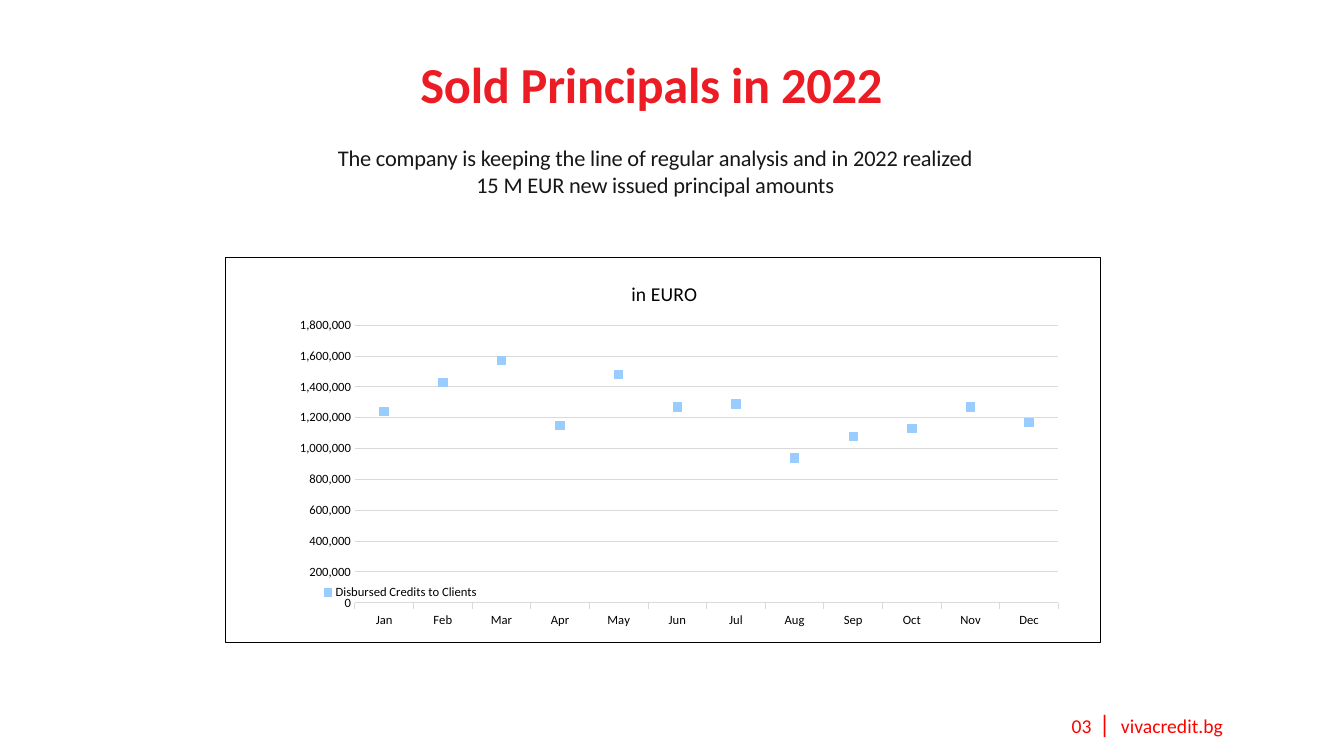
from lxml.etree import SubElement
from pptx import Presentation
from pptx.chart.data import CategoryChartData
from pptx.dml.color import RGBColor
from pptx.enum.chart import XL_CHART_TYPE, XL_LEGEND_POSITION, XL_MARKER_STYLE, XL_TICK_MARK
from pptx.enum.text import MSO_ANCHOR, PP_ALIGN
from pptx.oxml import parse_xml
from pptx.oxml.ns import nsdecls, qn
from pptx.util import Inches, Pt

FONT = "Calibri"
MONTHS = "Jan Feb Mar Apr May Jun Jul Aug Sep Oct Nov Dec".split()
CREDITS = [1240000, 1430000, 1570000, 1150000, 1480000, 1270000,
           1290000, 940000, 1080000, 1130000, 1270000, 1170000]


def rgb(value):
    """Return the colour for a hex string."""
    return RGBColor.from_string(value)


def style_font(font, size, color="000000", bold=False):
    """Apply the deck's typeface with a size, colour and weight."""
    font.name, font.size, font.bold = FONT, Pt(size), bold
    font.color.rgb = rgb(color)


def add_text(p, text, size=16, color="000000", bold=False, spacing=0):
    """Append formatted text to a paragraph, with spacing in points."""
    r = p.add_run()
    r.text = text
    style_font(r.font, size, color, bold)
    if spacing:
        r.font._element.set("spc", str(round(spacing * 100)))


def add_tabs(p, *stops):
    """Set left tab stops, in inches, on a paragraph."""
    tabs = SubElement(p._p.get_or_add_pPr(), qn("a:tabLst"))
    for stop in stops:
        SubElement(tabs, qn("a:tab"), pos=str(Inches(stop)), algn="l")


def add_box(s, x, y, w, h):
    """Add a wrapping text box and return its first paragraph."""
    tf = s.shapes.add_textbox(Inches(x), Inches(y), Inches(w), Inches(h)).text_frame
    tf.word_wrap = True
    return tf.paragraphs[0]


def add_title(s, x, y, w, h):
    """Place the slide title in its placeholder."""
    sp = s.shapes.title
    sp.left, sp.top, sp.width, sp.height = map(Inches, (x, y, w, h))
    tf = sp.text_frame
    tf.margin_left = tf.margin_right = tf.margin_bottom = 0
    tf.margin_top = Inches(0.02)
    tf.vertical_anchor = MSO_ANCHOR.TOP
    p = tf.paragraphs[0]
    p.alignment = PP_ALIGN.LEFT
    p.line_spacing = 1.0
    add_text(p, "Sold Principals in 2022", size=36, color="EC1C24", bold=True, spacing=-0.2)


def add_summary(s, x, y, w, h):
    """Place the centred two-line summary."""
    p = add_box(s, x, y, w, h)
    p.alignment = PP_ALIGN.CENTER
    look = dict(size=16, color="181717", spacing=-0.1)
    add_text(p, "The company is keeping the line of regular analysis and in 2022 realized", **look)
    p.add_line_break()
    add_text(p, "15 M EUR new issued principal amounts", **look)


def add_footer(s, x, y, w, h):
    """Place the page number, divider and web address."""
    p = add_box(s, x, y, w, h)
    add_tabs(p, 0.27, 0.49)
    add_text(p, "03\t", size=14, color="FF0000")
    add_text(p, "|\t", size=18, color="FF0000")
    add_text(p, "vivacredit.bg", size=14, color="FF0000")


def set_layout(element, target=None, **place):
    """Give a chart part a manual layout in fractions of the chart."""
    for old in element.findall(qn("c:layout")):
        element.remove(old)
    inner = f'<c:layoutTarget val="{target}"/>' if target else ""
    inner += "".join(f'<c:{k}Mode val="edge"/>' for k in "xy")
    inner += "".join(f'<c:{k} val="{v}"/>' for k, v in place.items())
    layout = parse_xml(f'<c:layout {nsdecls("c")}><c:manualLayout>{inner}'
                       '</c:manualLayout></c:layout>')
    overlay = element.find(qn("c:overlay"))
    element.insert(0 if overlay is None else element.index(overlay), layout)


def add_border(chart, color):
    """Outline the whole chart on a white ground."""
    chart._chartSpace.find(qn("c:chart")).addnext(parse_xml(
        f'<c:spPr {nsdecls("c", "a")}><a:solidFill><a:srgbClr val="FFFFFF"/></a:solidFill>'
        f'<a:ln w="{Pt(0.75)}"><a:solidFill><a:srgbClr val="{color}"/></a:solidFill></a:ln>'
        '</c:spPr>'))


def style_axes(chart):
    """Format the month and amount axes."""
    months, amounts = chart.category_axis, chart.value_axis
    for axis in (months, amounts):
        style_font(axis.tick_labels.font, 9)
        axis.minor_tick_mark = XL_TICK_MARK.NONE
    months.major_tick_mark = XL_TICK_MARK.OUTSIDE
    amounts.major_tick_mark = XL_TICK_MARK.NONE
    amounts.format.line.fill.background()
    amounts.minimum_scale, amounts.maximum_scale = 0, 1800000
    amounts.major_unit = 200000
    amounts.tick_labels.number_format = "#,##0"
    amounts.tick_labels.number_format_is_linked = False
    for line in (months.format.line, amounts.major_gridlines.format.line):
        line.color.rgb, line.width = rgb("D9D9D9"), Pt(0.75)


def add_credit_chart(s, x, y, w, h):
    """Place the chart of monthly credits."""
    data = CategoryChartData(number_format="#,##0")
    data.categories = MONTHS
    data.add_series("Disbursed Credits to Clients", CREDITS)
    chart = s.shapes.add_chart(XL_CHART_TYPE.LINE_MARKERS, Inches(x), Inches(y),
                               Inches(w), Inches(h), data).chart
    style_font(chart.font, 10)
    add_border(chart, "000000")
    style_axes(chart)
    chart.has_title = True
    add_text(chart.chart_title.text_frame.paragraphs[0], "in EURO", size=14)
    set_layout(chart.chart_title._element, x=0.46, y=0.05)
    chart.has_legend = True
    chart.legend.position = XL_LEGEND_POSITION.RIGHT
    chart.legend.include_in_layout = False
    style_font(chart.legend.font, 9)
    set_layout(chart.legend._element, x=0.1, y=0.84, w=0.2, h=0.06)
    set_layout(chart._chartSpace.chart.plotArea, "inner", x=0.148, y=0.176, w=0.804, h=0.721)
    plot = chart.plots[0]
    plot.vary_by_categories = False
    series = plot.series[0]
    series.smooth = False
    series.format.line.fill.background()
    marker = series.marker
    marker.style, marker.size = XL_MARKER_STYLE.SQUARE, 6
    marker.format.fill.solid()
    marker.format.fill.fore_color.rgb = rgb("99CCFF")
    marker.format.line.fill.background()


def main():
    """Build and save the slide."""
    prs = Presentation()
    prs.slide_width, prs.slide_height = Inches(13.33), Inches(7.5)
    s = prs.slides.add_slide(prs.slide_layouts[5])
    add_title(s, 4.17, 0.51, 6.35, 0.62)
    add_summary(s, 1.24, 1.38, 10.52, 0.64)
    add_credit_chart(s, 2.23, 2.55, 8.69, 3.83)
    add_footer(s, 10.53, 6.98, 2.26, 0.4)
    prs.save("out.pptx")


if __name__ == "__main__":
    main()
